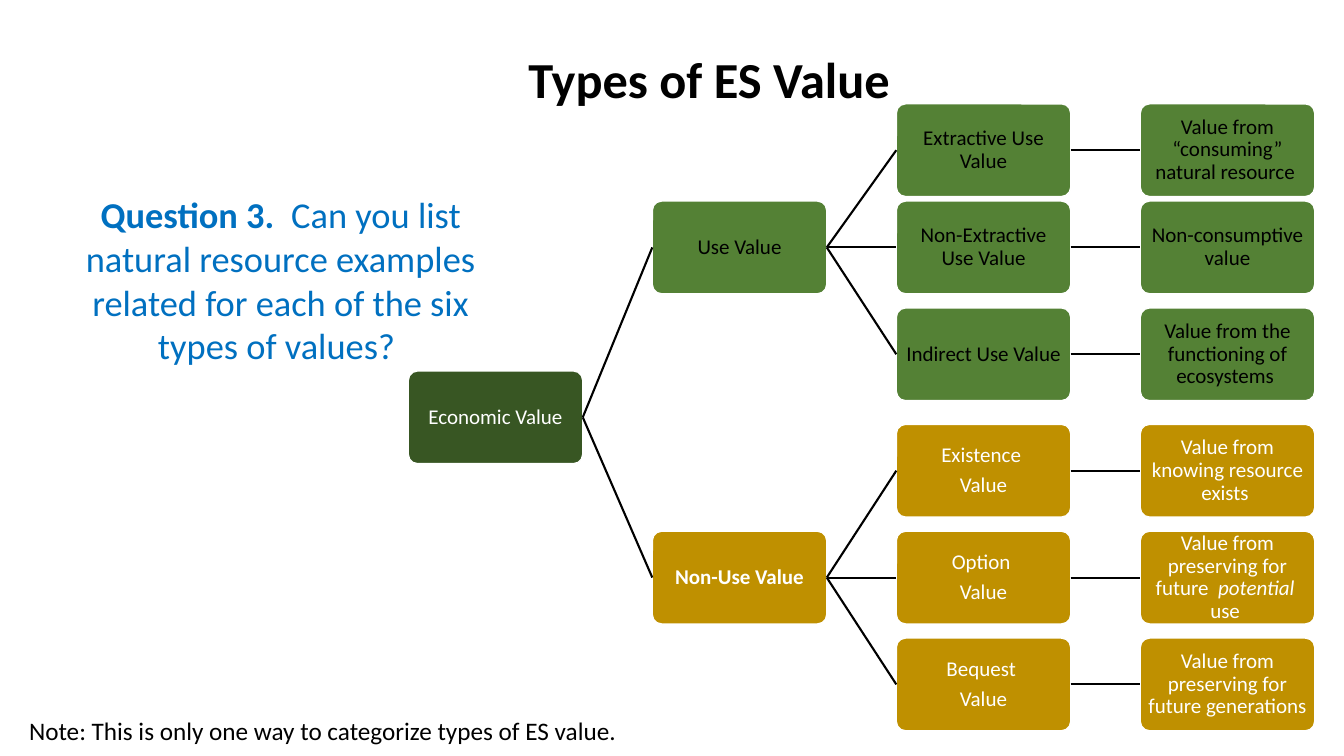
import pptx
import pptx.util
import pptx.dml.color
import pptx.enum.shapes
import pptx.enum.text
import pptx.oxml.ns
import lxml.etree

RGBColor = pptx.dml.color.RGBColor
BLACK = RGBColor(0x00, 0x00, 0x00)
WHITE = RGBColor(0xFF, 0xFF, 0xFF)
FOREST = RGBColor(0x38, 0x56, 0x23)
GREEN = RGBColor(0x54, 0x81, 0x35)
GOLD = RGBColor(0xBF, 0x90, 0x00)
BLUE = RGBColor(0x00, 0x70, 0xC0)
CENTER = pptx.enum.text.PP_ALIGN.CENTER
LEFT = pptx.enum.text.PP_ALIGN.LEFT
MIDDLE = pptx.enum.text.MSO_ANCHOR.MIDDLE
TOP = pptx.enum.text.MSO_ANCHOR.TOP


class Deck:
    font = "Calibri"
    origin = (4.05, 1.03)
    pitch = (2.42, 1.06)
    box = (1.73, 0.92)

    def __init__(self, prs):
        self.s = prs.slides.add_slide(prs.slide_layouts[5])

    def fill_text(self, tf, paras, size, ink, align=CENTER, anchor=MIDDLE,
                  spacing=0.9, inset=(0.1, 0.05)):
        tf.word_wrap = True
        tf.auto_size = pptx.enum.text.MSO_AUTO_SIZE.NONE
        tf.vertical_anchor = anchor
        tf.margin_left = tf.margin_right = pptx.util.Inches(inset[0])
        tf.margin_top = tf.margin_bottom = pptx.util.Inches(inset[1])
        for i, runs in enumerate(paras):
            p = tf.add_paragraph() if i else tf.paragraphs[0]
            p.alignment = align
            p.line_spacing = spacing
            p.space_before = pptx.util.Pt(5.2 if i else 0)
            for text, style in runs:
                r = p.add_run()
                r.text = text
                r.font.name = self.font
                r.font.size = pptx.util.Pt(size)
                r.font.color.rgb = ink
                r.font.bold = style == "b"
                r.font.italic = style == "i"

    def title(self, at, text):
        sp = self.s.shapes.title
        sp.left, sp.top, sp.width, sp.height = map(pptx.util.Inches, at)
        self.fill_text(sp.text_frame, [[(text, "b")]], 36, BLACK)

    def text(self, at, runs, size, ink, align):
        sp = self.s.shapes.add_textbox(*map(pptx.util.Inches, at))
        self.fill_text(sp.text_frame, [runs], size, ink, align, TOP, 1.0)

    def node(self, col, row, paras, fill, ink):
        at = [o + n * step for o, n, step in zip(self.origin, (col, row), self.pitch)]
        sp = self.s.shapes.add_shape(
            pptx.enum.shapes.MSO_SHAPE.ROUNDED_RECTANGLE,
            *map(pptx.util.Inches, (*at, *self.box)))
        sp.adjustments[0] = 0.1
        sp.shadow.inherit = False
        sp.fill.solid()
        sp.fill.fore_color.rgb = fill
        sp.line.color.rgb = WHITE
        sp.line.width = pptx.util.Pt(1)
        self.fill_text(sp.text_frame, paras, 15, ink, inset=(0.04, 0.04))
        return sp

    def link(self, parent, child):
        c = self.s.shapes.add_connector(
            pptx.enum.shapes.MSO_CONNECTOR.STRAIGHT, 0, 0, 0, 0)
        c.begin_connect(parent, 3)
        c.end_connect(child, 1)
        c.line.color.rgb = BLACK
        c.line.width = pptx.util.Pt(1.5)
        lxml.etree.SubElement(c._element.spPr, pptx.oxml.ns.qn("a:effectLst"))


BRANCHES = [
    (0.91, ("Use Value", ""), GREEN, BLACK, [
        (0, ["Extractive Use Value"], [("Value from “consuming” natural resource ", "")]),
        (0.91, ["Non-Extractive Use Value"], [("Non-consumptive value", "")]),
        (1.91, ["Indirect Use Value"], [("Value from the functioning of ecosystems ", "")]),
    ]),
    (4, ("Non-Use Value", "b"), GOLD, WHITE, [
        (3, ["Existence ", "Value"], [("Value from knowing resource exists ", "")]),
        (4, ["Option ", "Value"], [("Value from preserving for future  ", ""),
                                   ("potential  ", "i"), ("use ", "")]),
        (5, ["Bequest ", "Value"], [("Value from preserving for future generations", "")]),
    ]),
]


def main():
    prs = pptx.Presentation()
    prs.slide_width = pptx.util.Inches(13.33)
    prs.slide_height = pptx.util.Inches(7.5)
    deck = Deck(prs)
    deck.title((3.39, 0.12, 7.4, 1.4), "Types of ES Value ")

    root = deck.node(0, 2.5, [[("Economic Value", "")]], FOREST, WHITE)
    for row, name, fill, ink, kinds in BRANCHES:
        branch = deck.node(1, row, [[name]], fill, ink)
        deck.link(root, branch)
        for kind_row, lines, meaning in kinds:
            kind = deck.node(2, kind_row, [[(t, "")] for t in lines], fill, ink)
            leaf = deck.node(3, kind_row, [meaning], fill, ink)
            deck.link(branch, kind)
            deck.link(kind, leaf)

    deck.text((0.19, 7.05, 6.17, 0.4),
              [("Note: This is only one way to categorize types of ES value.", "")],
              18, BLACK, LEFT)
    deck.text((0.51, 1.86, 4.55, 1.85),
              [("Question 3.  ", "b"),
               ("Can you list natural resource examples related for each "
                "of the six types of values? ", "")],
              26, BLUE, CENTER)
    prs.save("out.pptx")


if __name__ == "__main__":
    main()
